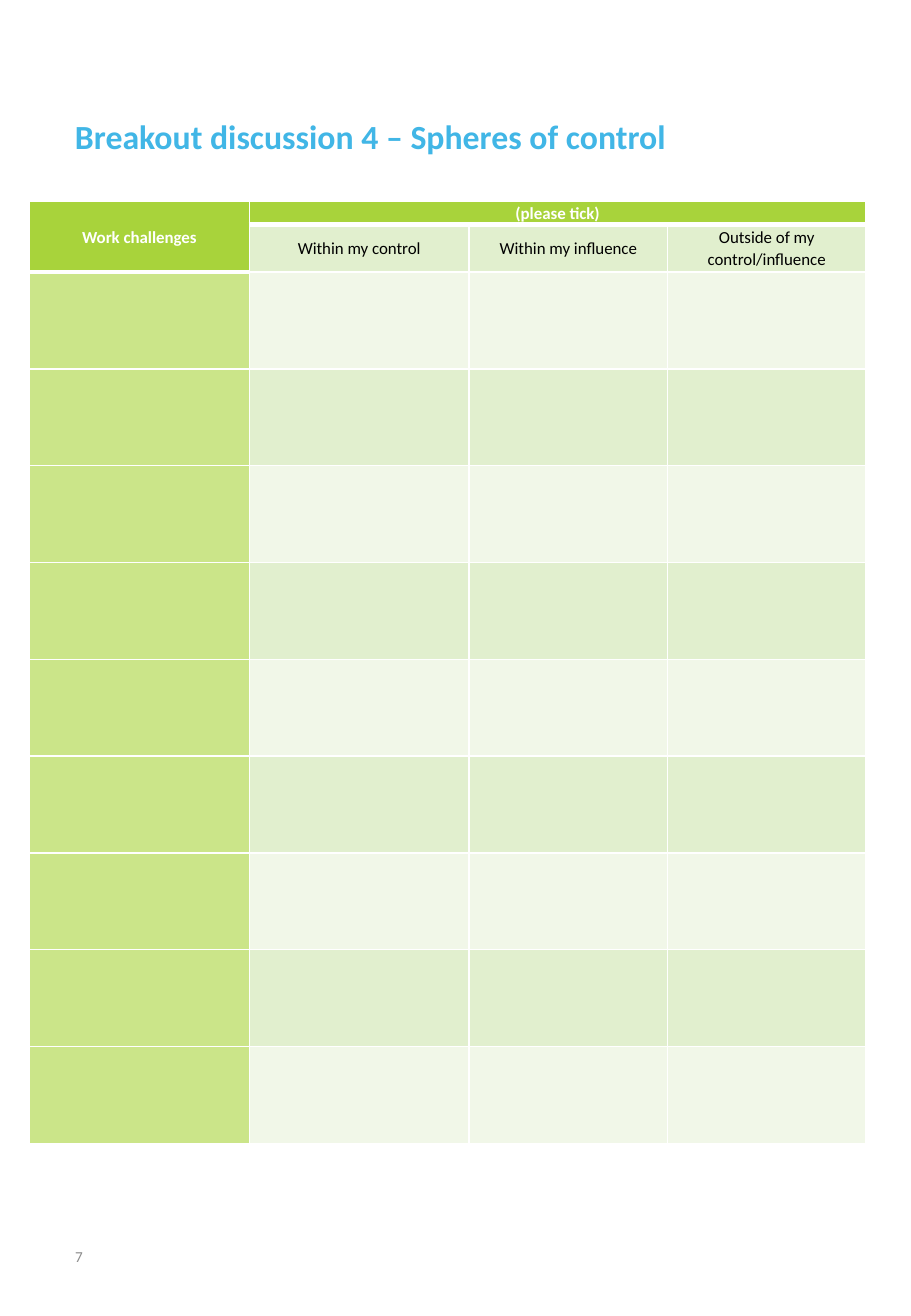
from lxml import etree
from pptx import Presentation
from pptx.dml.color import RGBColor
from pptx.enum.text import MSO_ANCHOR, PP_ALIGN
from pptx.oxml.ns import qn
from pptx.util import Pt

MIDDLE = MSO_ANCHOR.MIDDLE
LEFT, CENTER = PP_ALIGN.LEFT, PP_ALIGN.CENTER

WHITE, BLACK, GREY, BLUE = "FFFFFF", "000000", "8C8C8C", "41B6E6"
HEADER, FIRST_COL, BAND_DARK, BAND_LIGHT = "A8D33B", "CBE589", "E1EFCE", "F1F7E8"

COL_WIDTHS = [130.3, 130.3, 117.6, 117.6]
CHALLENGE_ROWS = 9
ROW_HEIGHTS = [13.7, 28.1] + [57.4] * CHALLENGE_ROWS
SPHERES = ["Within my control", "Within my influence", "Outside of my control/influence"]


def rgb(color):
    return RGBColor.from_string(color)


class Sheet:
    font = "Calibri"

    def __init__(self, prs):
        self.s = prs.slides.add_slide(prs.slide_layouts[6])

    def add_run(self, tf, text, size, color, bold=False, align=LEFT, spacing=1.0):
        p = tf.paragraphs[0]
        p.alignment = align
        p.line_spacing = spacing
        r = p.add_run()
        r.text = text
        r.font.name = self.font
        r.font.size = Pt(size)
        r.font.bold = bold
        r.font.color.rgb = rgb(color)

    def text(self, x, y, w, h, text, size, color, bold=False, spacing=1.0):
        tf = self.s.shapes.add_textbox(Pt(x), Pt(y), Pt(w), Pt(h)).text_frame
        tf.word_wrap = True
        tf.vertical_anchor = MIDDLE
        self.add_run(tf, text, size, color, bold, spacing=spacing)

    def table(self, x, y, widths, heights):
        frame = self.s.shapes.add_table(len(heights), len(widths), Pt(x), Pt(y),
                                        Pt(sum(widths)), Pt(sum(heights)))
        table = frame.table
        table.first_row = table.horz_banding = False
        for column, width in zip(table.columns, widths):
            column.width = Pt(width)
        for row, height in zip(table.rows, heights):
            row.height = Pt(height)
        return table

    def cell(self, cell, fill, bottom=1):
        """Fill a cell and give it white borders, the bottom one of its own width."""
        tcPr = cell._tc.get_or_add_tcPr()
        for side, width in (("L", 1), ("R", 1), ("T", 1), ("B", bottom)):
            ln = etree.SubElement(tcPr, qn(f"a:ln{side}"), w=str(Pt(width)))
            solid = etree.SubElement(ln, qn("a:solidFill"))
            etree.SubElement(solid, qn("a:srgbClr"), val=WHITE)
        cell.fill.solid()
        cell.fill.fore_color.rgb = rgb(fill)
        cell.margin_left = cell.margin_right = Pt(5)
        cell.margin_top = cell.margin_bottom = 0
        cell.vertical_anchor = MIDDLE

    def label(self, cell, text, color, bold=False):
        self.add_run(cell.text_frame, text, 10, color, bold, CENTER, 1.07)


def main():
    prs = Presentation()
    prs.slide_width, prs.slide_height = Pt(540), Pt(780)
    sheet = Sheet(prs)

    sheet.text(37.4, 61.2, 465.8, 41.8, "Breakout discussion 4 – Spheres of control",
               20, BLUE, bold=True, spacing=0.9)
    sheet.text(37.4, 723.6, 121.7, 41.8, "7", 9, GREY)

    table = sheet.table(17.5, 119.5, COL_WIDTHS, ROW_HEIGHTS)
    for row in range(len(ROW_HEIGHTS)):
        band = BAND_DARK if row % 2 else BAND_LIGHT
        for col in range(len(COL_WIDTHS)):
            is_header = row == 0 or (row == 1 and col == 0)
            fill = HEADER if is_header else FIRST_COL if col == 0 else band
            sheet.cell(table.cell(row, col), fill, bottom=3 if is_header else 1)

    table.cell(0, 0).merge(table.cell(1, 0))
    table.cell(0, 1).merge(table.cell(0, 3))
    sheet.label(table.cell(0, 0), "Work challenges", WHITE, bold=True)
    sheet.label(table.cell(0, 1), "(please tick)", WHITE, bold=True)
    for col, sphere in enumerate(SPHERES, start=1):
        sheet.label(table.cell(1, col), sphere, BLACK)

    prs.save("out.pptx")


if __name__ == "__main__":
    main()
